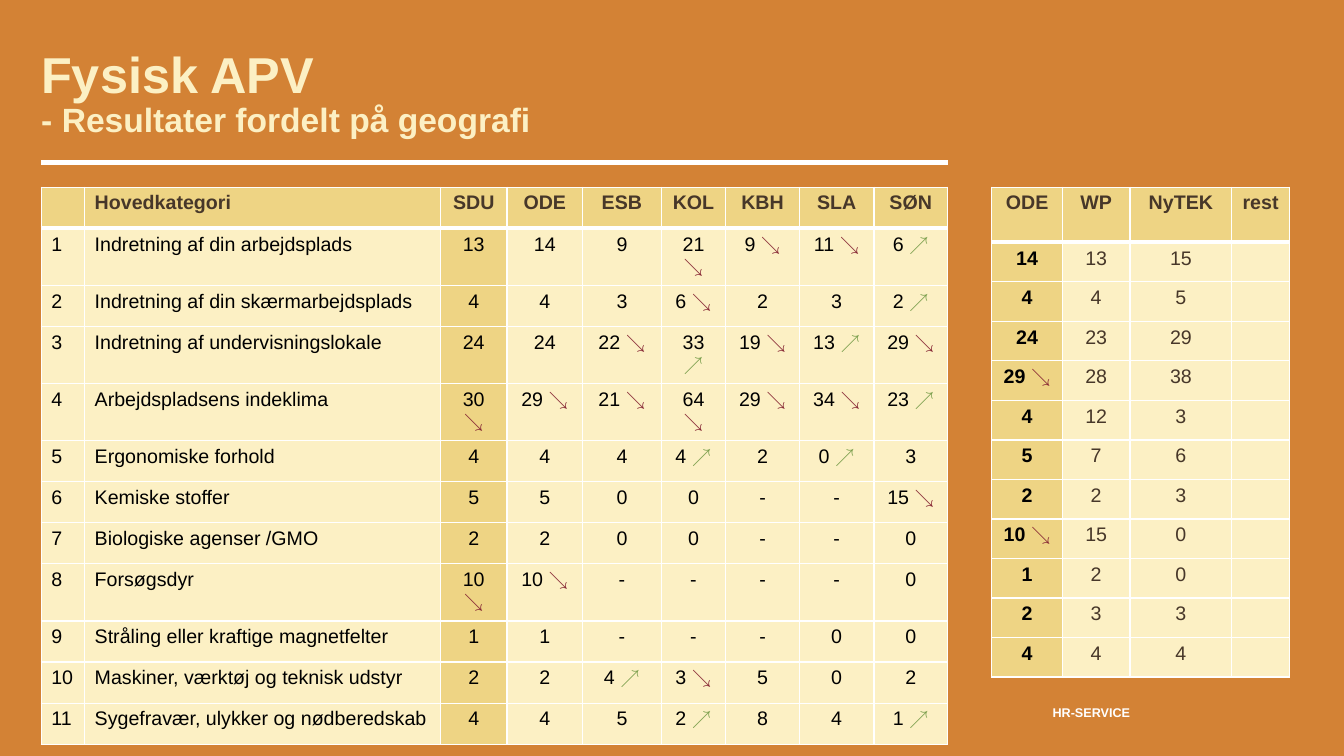
"""Build the slide on physical workplace results by site."""
from dataclasses import dataclass

from lxml.etree import SubElement as Sub
from pptx import Presentation
from pptx.dml.color import RGBColor as Rgb
from pptx.enum.shapes import MSO_CONNECTOR as Conn
from pptx.enum.text import MSO_ANCHOR as Anchor, PP_ALIGN as Align
from pptx.oxml.ns import qn
from pptx.util import Inches, Pt

WIDE, HIGH = Inches(13.33), Inches(7.5)
HUES = {"back": "D38235", "cream": "FCF0C4", "sand": "EED484", "brown": "473729",
        "white": "FFFFFF", "black": "000000", "↘": "862633", "↗": "789D4A"}
LEFT, TOP, RULE = 3.07, 24.75, 21.45
SITES = ["SDU", "ODE", "ESB", "KOL", "KBH", "SLA", "SØN"]
TOPICS = {
    "Indretning af din arbejdsplads": "13|14|9|21 ↘|9 ↘|11 ↘|6 ↗",
    "Indretning af din skærmarbejdsplads": "4|4|3|6 ↘|2|3|2 ↗",
    "Indretning af undervisningslokale": "24|24|22 ↘|33 ↗|19 ↘|13 ↗|29 ↘",
    "Arbejdspladsens indeklima": "30 ↘|29 ↘|21 ↘|64 ↘|29 ↘|34 ↘|23 ↗",
    "Ergonomiske forhold": "4|4|4|4 ↗|2|0 ↗|3",
    "Kemiske stoffer": "5|5|0|0|-|-|15 ↘",
    "Biologiske agenser /GMO": "2|2|0|0|-|-|0",
    "Forsøgsdyr": "10 ↘|10 ↘|-|-|-|-|0",
    "Stråling eller kraftige magnetfelter": "1|1|-|-|-|0|0",
    "Maskiner, værktøj og teknisk udstyr": "2|2|4 ↗|3 ↘|5|0|2",
    "Sygefravær, ulykker og nødberedskab": "4|4|5|2 ↗|8|4|1 ↗",
}
WP = [13, 4, 23, 28, 12, 7, 2, 15, 2, 3, 4]
NYTEK = [15, 5, 29, 38, 3, 6, 3, 0, 0, 3, 4]


@dataclass
class Look:
    size: int
    hue: str
    bold: bool = True


@dataclass
class Label:
    box: tuple[float, float, float, float]
    lines: list[tuple[str, Look]]
    form: dict
    align: Align = Align.LEFT
    pitch: float = 1.0


@dataclass
class Grid:
    left: float
    cols: list[float]
    head: float
    row: float
    data: list[list[str]]
    key: int
    names: int
    body: Look
    lead: Look


def across(share: float) -> int:
    return round(WIDE * share / 100)


def down(share: float) -> int:
    return round(HIGH * share / 100)


def write(para, text: str, look: Look) -> None:
    run = para.add_run()
    run.text = text
    form = {"name": "Arial", "size": Pt(look.size), "bold": look.bold}
    for key, value in form.items():
        setattr(run.font, key, value)
    run.font.color.rgb = Rgb.from_string(HUES[look.hue])


def label(slide, item: Label) -> None:
    x, y, w, h = item.box
    frame = slide.shapes.add_textbox(across(x), down(y), across(w), down(h)).text_frame
    edges = dict.fromkeys(("margin_left", "margin_top", "margin_right", "margin_bottom"), 0)
    for key, value in {**edges, "word_wrap": True, **item.form}.items():
        setattr(frame, key, value)
    para = frame.paragraphs[0]
    para.alignment, para.line_spacing = item.align, item.pitch
    for i, (text, look) in enumerate(item.lines):
        if i:
            para.add_line_break()
        write(para, text, look)


def border(cell, base: float) -> None:
    props = cell._tc.get_or_add_tcPr()
    for side in ("lnL", "lnR", "lnT", "lnB"):
        width = base if side == "lnB" else 1
        line = Sub(props, qn(f"a:{side}"), w=str(Pt(width)))
        Sub(Sub(line, qn("a:solidFill")), qn("a:srgbClr"), val=HUES["white"])


def fill(cell, text: str, look: Look, hue: str, align: Align, base: float) -> None:
    border(cell, base)
    cell.fill.solid()
    cell.fill.fore_color.rgb = Rgb.from_string(HUES[hue])
    para = cell.text_frame.paragraphs[0]
    para.alignment = align
    mark = text[-1:]
    if mark in ("↘", "↗"):
        write(para, text[:-1], look)
        write(para, mark, Look(look.size, mark))
    elif text:
        write(para, text, look)
    else:
        Sub(para._p, qn("a:endParaRPr"), sz=str(look.size * 100))


def draw(slide, grid: Grid) -> None:
    rows, cols = len(grid.data), len(grid.cols)
    tall = grid.head + grid.row * (rows - 1)
    table = slide.shapes.add_table(rows, cols, across(grid.left), down(TOP),
                                   across(sum(grid.cols)), down(tall)).table
    table.horz_banding = False
    for col, share in zip(table.columns, grid.cols):
        col.width = across(share)
    for r, texts in enumerate(grid.data):
        table.rows[r].height = down(grid.row if r else grid.head)
        for c, text in enumerate(texts):
            lead = c == grid.key
            look = (grid.lead if lead else grid.body) if r else Look(14, "brown")
            hue = "sand" if lead or not r else "cream"
            align = Align.LEFT if c < grid.names else Align.CENTER
            fill(table.cell(r, c), text, look, hue, align, 1 if r else 3)


def rule(slide, x: float, y: float, end: float) -> None:
    line = slide.shapes.add_connector(Conn.STRAIGHT, across(x), down(y), across(end), down(y))
    line.line.width = Pt(3.75)
    line.line.color.rgb = Rgb.from_string(HUES["white"])
    Sub(line._element.spPr, qn("a:effectLst"))


def main() -> None:
    deck = Presentation()
    deck.slide_width, deck.slide_height = WIDE, HIGH
    slide = deck.slides.add_slide(deck.slide_layouts[6])
    back = slide.background.fill
    back.solid()
    back.fore_color.rgb = Rgb.from_string(HUES["back"])

    scores = [row.split("|") for row in TOPICS.values()]
    topics = [[str(i), name, *row] for i, (name, row) in enumerate(zip(TOPICS, scores), 1)]
    ode = [[row[1], str(wp), str(tek), ""] for row, wp, tek in zip(scores, WP, NYTEK)]
    plain = Look(14, "black", False)
    main_cols = [3.23, 26.48, 4.95, 5.63, 5.85, 4.8, 5.48, 5.55, 5.48]

    label(slide, Label((56.7, 90, 27.38, 5.2), [("HR-SERVICE", Look(9, "white"))],
                       {"vertical_anchor": Anchor.BOTTOM}, Align.RIGHT))
    label(slide, Label((LEFT, 6.67, 93.6, 18.27),
                       [("Fysisk APV", Look(36, "cream")),
                        ("- Resultater fordelt på geografi", Look(24, "cream"))],
                       {"vertical_anchor": Anchor.TOP}, pitch=0.89))
    draw(slide, Grid(LEFT, main_cols, 5.43, 5.43, [["", "Hovedkategori", *SITES], *topics],
                     2, 2, plain, plain))
    rule(slide, LEFT, RULE, LEFT + sum(main_cols))
    draw(slide, Grid(73.8, [5.25, 5.03, 7.58, 4.28], 7.3, 5.23,
                     [["ODE", "WP", "NyTEK", "rest"], *ode],
                     0, 0, Look(14, "brown", False), Look(14, "black")))
    deck.save("out.pptx")


if __name__ == "__main__":
    main()
